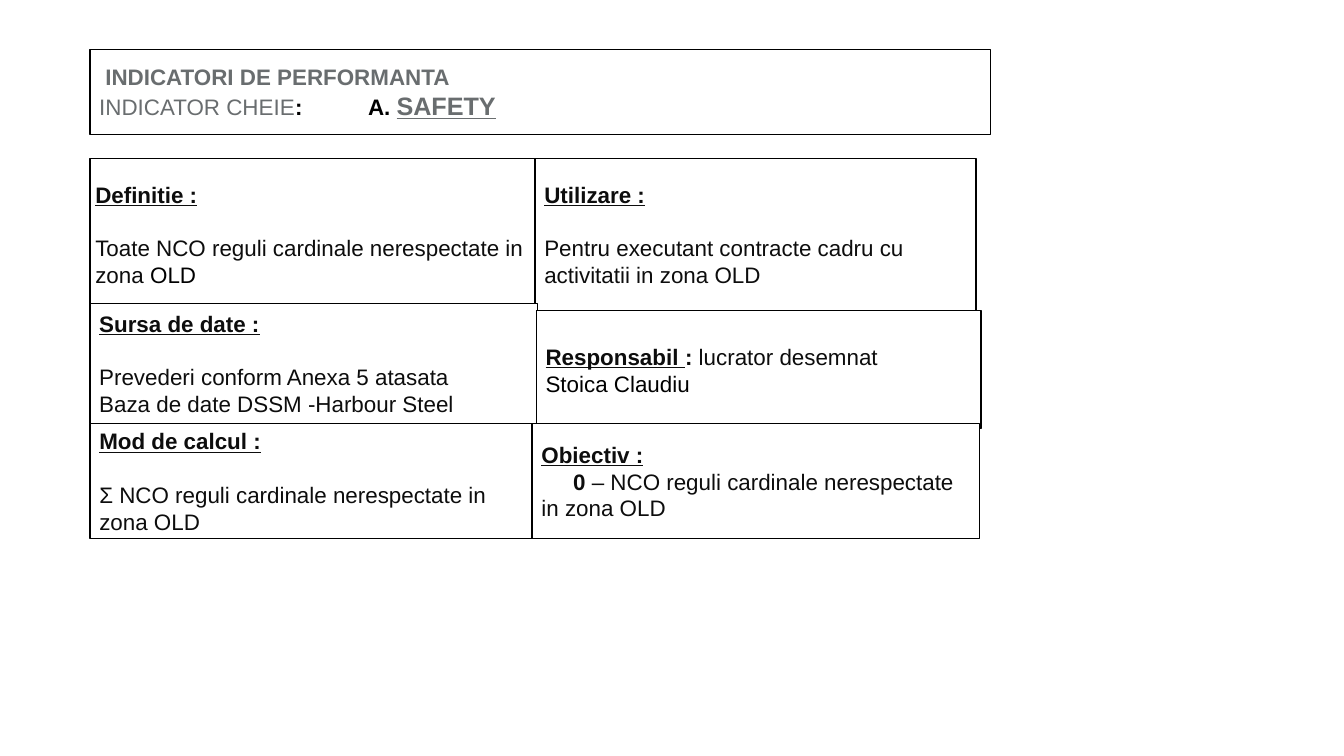
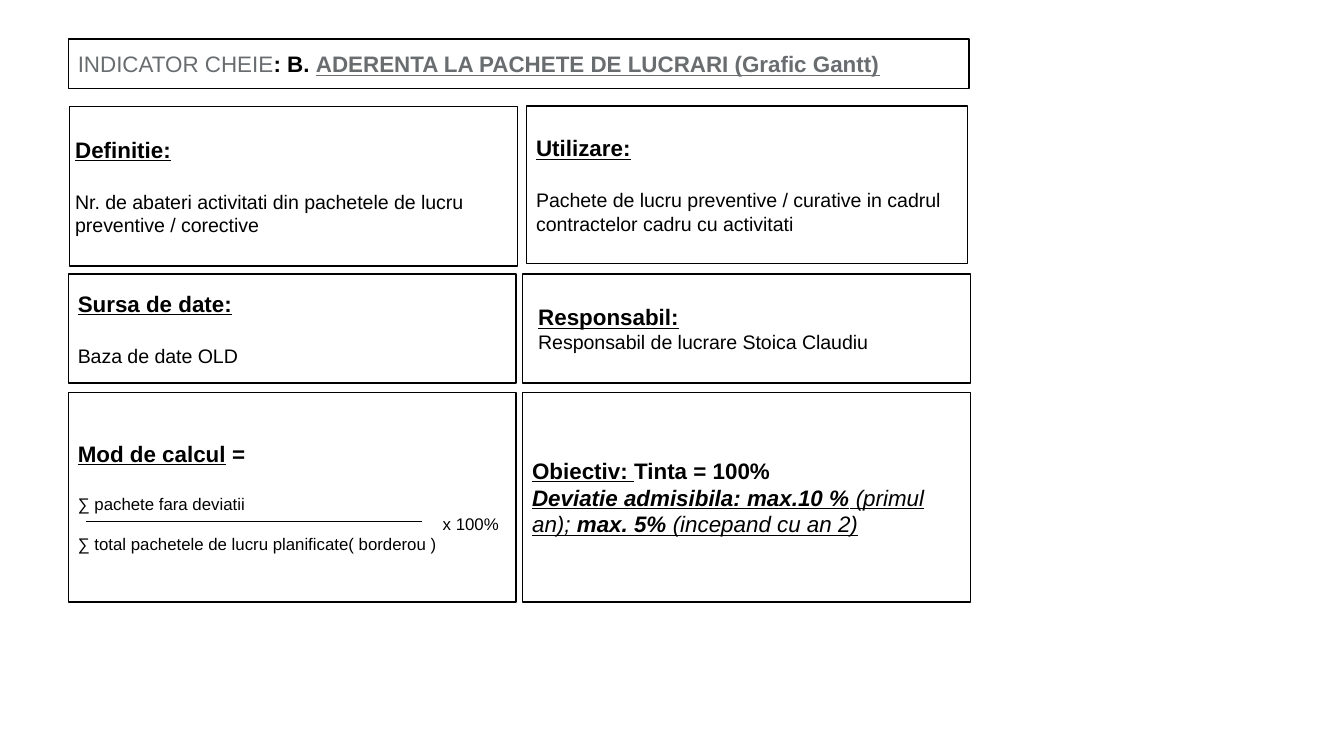
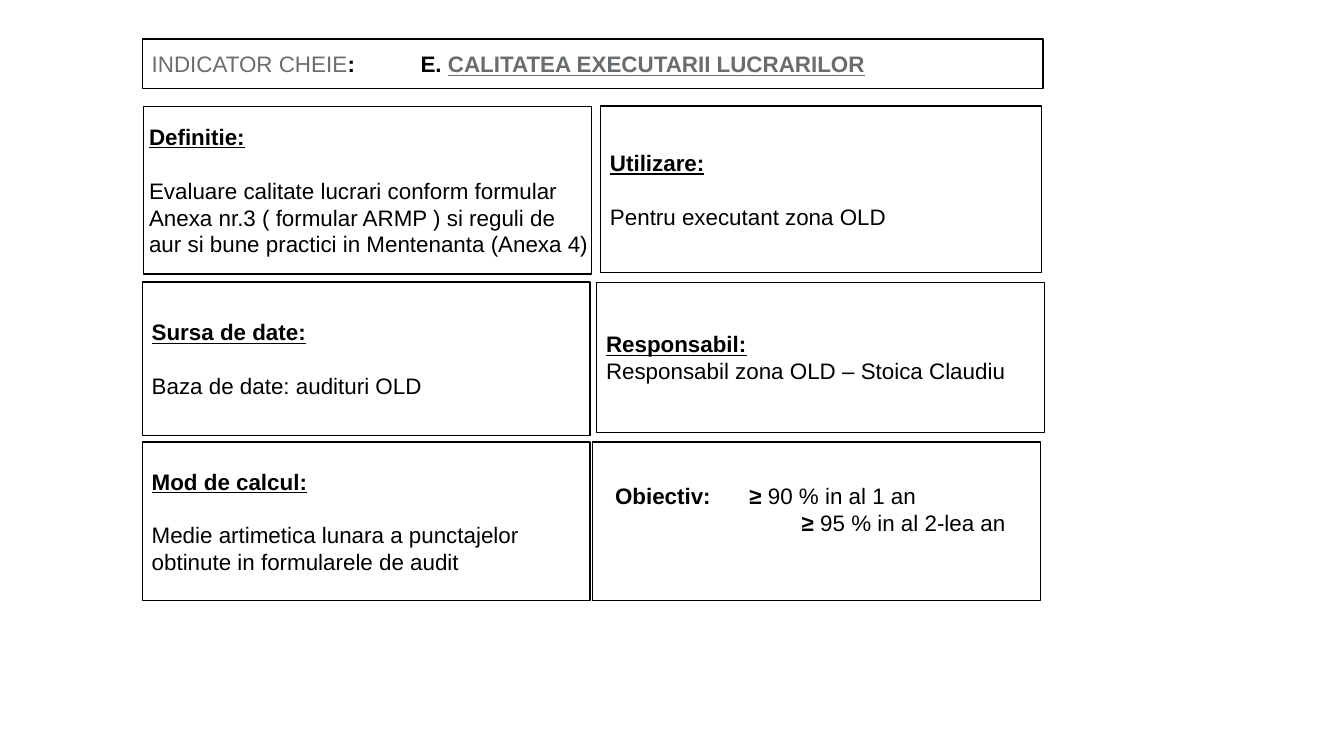
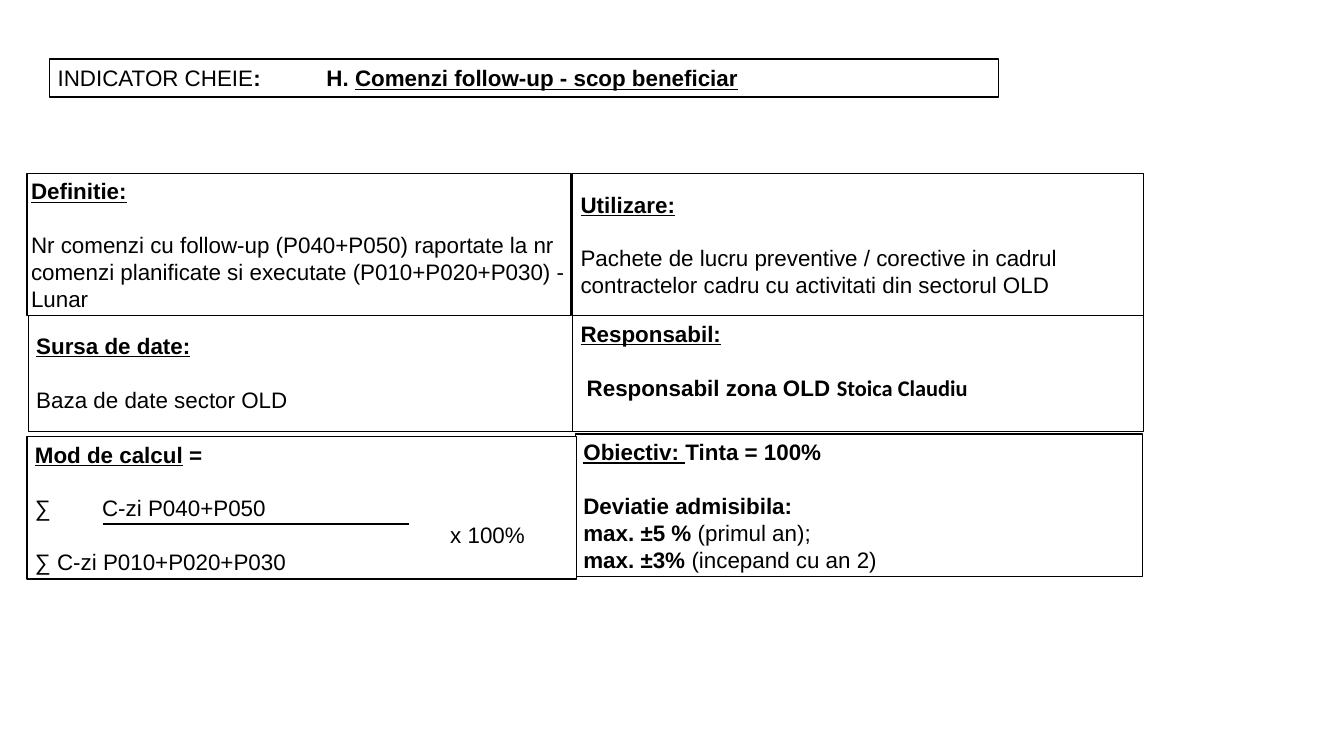
"""Builds four performance indicator sheets for framework contracts."""
from dataclasses import dataclass
from typing import Optional

import pptx
import pptx.dml.color
import pptx.enum.shapes
import pptx.enum.text
import pptx.oxml.ns
import pptx.oxml.xmlchemy
import pptx.util
from lxml import etree

Pt = pptx.util.Pt
RGBColor = pptx.dml.color.RGBColor
Anchor = pptx.enum.text.MSO_ANCHOR
qn = pptx.oxml.ns.qn

BLACK = RGBColor(0x00, 0x00, 0x00)
WHITE = RGBColor(0xFF, 0xFF, 0xFF)
INK = RGBColor(0x0D, 0x0D, 0x0D)
GRAY = RGBColor(0x69, 0x6D, 0x6F)
BORDER = 0.75
GAP = 14.4
SPACE = 3.3


@dataclass(frozen=True)
class Run:
    """A piece of text with its format; no colour means the sheet's ink."""
    text: str
    size: float = 12
    bold: bool = False
    italic: bool = False
    underline: bool = False
    color: Optional[RGBColor] = None
    font: str = "Arial"


@dataclass(frozen=True)
class Line:
    """A paragraph with its spacing, indents and tab stop in points."""
    runs: tuple[Run, ...]
    before: float = 0
    left: float = 0
    first: float = 0
    tab: float = 0


@dataclass(frozen=True)
class Insets:
    """The inner margins of a box in points."""
    left: float
    top: float
    right: float
    bottom: float


@dataclass(frozen=True)
class Box:
    """A bordered cell: left, top, width, height and its lines."""
    frame: tuple[float, float, float, float]
    lines: tuple[Line, ...]
    insets: Optional[Insets] = None
    anchor: Anchor = Anchor.MIDDLE


@dataclass(frozen=True)
class Sheet:
    """One indicator slide; a fraction bar is start x, end x and y."""
    boxes: tuple[Box, ...]
    insets: Insets
    ink: RGBColor = BLACK
    fraction_bar: Optional[tuple[float, float, float]] = None


WIDE = Insets(5, 2.9, 5, 2.9)
WIDE_DEFINITION = Insets(2.9, 2.9, 0, 2.9)
NARROW = Insets(4.3, 2.2, 4.3, 2.2)
NARROW_DEFINITION = Insets(2.2, 2.2, 0, 2.2)
TARGET = Insets(12, 21.6, 5, 2.9)


def strong(text: str, **style) -> Run:
    """Return a bold run."""
    return Run(text, bold=True, **style)


def label(text: str) -> Run:
    """Return the underlined bold name of a cell."""
    return strong(text, underline=True)


def line(*runs: Run, **layout: float) -> Line:
    """Return a paragraph made of the given runs."""
    return Line(runs, **layout)


def entry(name: str, text: str, size: float = 12) -> tuple[Line, ...]:
    """Return a cell name and, after a gap, its description."""
    return line(label(name)), line(Run(text, size), before=GAP)


def title(letter: str, name: str, tab: float = 0, color: RGBColor = GRAY,
          size: float = 12) -> Line:
    """Return the key indicator line of a sheet."""
    gap = "\t" if tab else " "
    return line(Run("INDICATOR CHEIE", color=color),
                strong(f":{gap}{letter}. ", color=BLACK),
                strong(name, size=size, underline=True, color=color), tab=tab)


SAFETY = Sheet((
    Box((48.2, 26.6, 482.4, 45.4), (
        line(strong("INDICATORI DE PERFORMANTA", color=GRAY), first=SPACE),
        title("A", "SAFETY", tab=118.7, size=13.5))),
    Box((48.2, 85, 239.8, 81.4), (
        line(label("Definitie :")),
        line(Run("Toate NCO reguli cardinale nerespectate in zona "),
             Run("OLD", color=BLACK), before=GAP)), WIDE_DEFINITION),
    Box((286.6, 85, 236.2, 81.4), entry(
        "Utilizare :", "Pentru executant contracte cadru cu activitatii in zona OLD")),
    Box((48.2, 162.7, 239.8, 64.1), (
        *entry("Sursa de date :", "Prevederi conform Anexa 5 atasata"),
        line(Run("Baza de date DSSM -Harbour Steel")))),
    Box((287.3, 166.3, 238.3, 63.4), (
        line(label("Responsabil "), strong(": "), Run("lucrator desemnat")),
        line(Run("Stoica Claudiu", color=BLACK)))),
    Box((48.2, 226.8, 236.9, 61.9), entry(
        "Mod de calcul :", "Σ NCO reguli cardinale nerespectate in zona OLD")),
    Box((285.1, 226.8, 239.8, 61.9), (
        line(label("Obiectiv :")),
        line(strong("0"), Run(" – NCO reguli cardinale nerespectate in zona OLD"),
             first=17))),
), WIDE, INK)

ADHERENCE = Sheet((
    Box((36.7, 20.9, 482.4, 26.6),
        (title("B", "ADERENTA LA PACHETE DE LUCRARI (Grafic Gantt)"),)),
    Box((37.4, 56.9, 239.8, 85.7), entry(
        "Definitie:",
        "Nr. de abateri activitati din pachetele de lucru preventive / corective",
        10.5), WIDE_DEFINITION),
    Box((282.2, 56.9, 236.2, 84.2), entry(
        "Utilizare:",
        "Pachete de lucru preventive / curative in cadrul contractelor cadru cu activitati",
        10.5)),
    Box((36.7, 146.9, 239.8, 58.3), entry("Sursa de date:", "Baza de date OLD", 10.5)),
    Box((280.1, 146.9, 239.8, 58.3), (
        line(label("Responsabil:"), first=SPACE),
        line(Run("Responsabil de lucrare Stoica Claudiu", 10.5), first=SPACE))),
    Box((36.7, 210.2, 239.8, 112.3), (
        line(label("Mod de calcul"), strong(" =")),
        line(Run("∑ pachete fara deviatii", 9), before=GAP),
        line(Run("x 100%", 9), left=195.5),
        line(Run("∑ total pachetele de lucru planificate( borderou )", 9)))),
    Box((280.1, 210.2, 239.8, 112.3), (
        line(label("Obiectiv: "), strong("Tinta = 100%")),
        line(strong("Deviatie admisibila: max.10 %", italic=True, underline=True),
             Run(" (primul an); ", italic=True, underline=True),
             strong("max. 5% ", italic=True, underline=True),
             Run("(incepand cu an 2)", italic=True, underline=True)))),
), WIDE, fraction_bar=(46.1, 226.1, 279.4))

QUALITY = Sheet((
    Box((76.3, 20.9, 482.4, 26.6),
        (title("E", "CALITATEA EXECUTARII LUCRARILOR", tab=116),)),
    Box((77, 56.9, 239.8, 90), entry(
        "Definitie:",
        "Evaluare calitate lucrari conform formular Anexa nr.3 ( formular ARMP ) "
        "si reguli de aur si bune practici in Mentenanta (Anexa 4)"), WIDE_DEFINITION),
    Box((321.8, 56.9, 236.2, 89.3), entry("Utilizare:", "Pentru executant zona OLD")),
    Box((76.3, 151.2, 239.8, 82.1),
        entry("Sursa de date:", "Baza de date: audituri OLD")),
    Box((319.7, 151.2, 239.8, 80.6), (
        line(label("Responsabil:")),
        line(Run("Responsabil zona OLD – Stoica Claudiu")))),
    Box((76.3, 236.9, 239.8, 85), entry(
        "Mod de calcul:",
        "Medie artimetica lunara a punctajelor obtinute in formularele de audit")),
    Box((317.5, 236.9, 239.8, 85), (
        line(strong("Obiectiv:\t≥ "), Run("90 % in al 1 an"), tab=100.5),
        line(strong("≥ "), Run("95 % in al 2-lea an"), left=100)), TARGET, Anchor.TOP),
), WIDE)

FOLLOW_UP = Sheet((
    Box((26.6, 31.7, 508.3, 20.2),
        (title("H", "Comenzi follow-up - scop beneficiar", 115.3, BLACK),)),
    Box((15.1, 167.8, 291.6, 63.4), entry("Sursa de date:", "Baza de date sector OLD")),
    Box((14.4, 92.9, 291.6, 76.3), entry(
        "Definitie:",
        "Nr comenzi cu follow-up (P040+P050) raportate la nr comenzi planificate "
        "si executate (P010+P020+P030) - Lunar"), NARROW_DEFINITION),
    Box((306.7, 92.9, 306, 76.3), entry(
        "Utilizare:",
        "Pachete de lucru preventive / corective in cadrul contractelor cadru "
        "cu activitati din sectorul OLD")),
    Box((306.7, 169.2, 306, 61.9), (
        line(label("Responsabil:")),
        line(strong("Responsabil zona OLD "), strong("Stoica Claudiu", font="Calibri"),
             before=GAP, first=SPACE)), anchor=Anchor.TOP),
    Box((308.2, 232.6, 303.8, 76.3), (
        line(label("Obiectiv: "), strong("Tinta = 100%")),
        line(strong("Deviatie admisibila:"), before=GAP),
        line(strong("max. ±5 %"), Run(" (primul an);")),
        line(strong("max. ±3% "), Run("(incepand cu an 2)")))),
    Box((14.4, 234, 294.5, 76.3), (
        line(label("Mod de calcul"), strong(" =")),
        line(Run("∑\tC-zi P040+P050"), before=GAP, tab=28),
        line(Run("x 100%"), left=222.5),
        line(Run("∑ C-zi P010+P020+P030")))),
), NARROW, fraction_bar=(55.4, 218.9, 280.8))


def add_text(paragraph, text: str, *, size: float, bold: bool, italic: bool,
             underline: bool, color: RGBColor, font: str) -> None:
    """Append formatted text to a paragraph."""
    run = paragraph.add_run()
    run.text = text
    run.font.size = Pt(size)
    run.font.bold = bold
    run.font.italic = italic
    run.font.underline = underline
    run.font.color.rgb = color
    run.font.name = font


def lay_out(paragraph, layout: Line) -> None:
    """Set the spacing, indents and tab stop of a paragraph."""
    paragraph.alignment = pptx.enum.text.PP_ALIGN.LEFT
    paragraph.space_before = Pt(layout.before)
    properties = paragraph._p.get_or_add_pPr()
    properties.set("marL", str(Pt(layout.left)))
    properties.set("indent", str(Pt(layout.first)))
    if layout.tab:
        stops = etree.SubElement(properties, qn("a:tabLst"))
        etree.SubElement(stops, qn("a:tab"), pos=str(Pt(layout.tab)), algn="l")


def draw_box(slide, box: Box, sheet: Sheet) -> None:
    """Draw a bordered cell with its text."""
    cell = slide.shapes.add_shape(pptx.enum.shapes.MSO_SHAPE.RECTANGLE,
                                  *(Pt(length) for length in box.frame))
    cell.shadow.inherit = False
    cell.fill.solid()
    cell.fill.fore_color.rgb = WHITE
    cell.line.color.rgb = BLACK
    cell.line.width = Pt(BORDER)
    frame = cell.text_frame
    frame.word_wrap = True
    frame.vertical_anchor = box.anchor
    insets = box.insets or sheet.insets
    frame.margin_left, frame.margin_top = Pt(insets.left), Pt(insets.top)
    frame.margin_right, frame.margin_bottom = Pt(insets.right), Pt(insets.bottom)
    for index, layout in enumerate(box.lines):
        paragraph = frame.add_paragraph() if index else frame.paragraphs[0]
        lay_out(paragraph, layout)
        for run in layout.runs:
            add_text(paragraph, run.text, size=run.size, bold=run.bold,
                     italic=run.italic, underline=run.underline,
                     color=sheet.ink if run.color is None else run.color,
                     font=run.font)


def draw_fraction_bar(slide, start: float, end: float, y: float) -> None:
    """Draw the bar between numerator and denominator."""
    bar = slide.shapes.add_connector(pptx.enum.shapes.MSO_CONNECTOR.STRAIGHT,
                                     Pt(start), Pt(y), Pt(end), Pt(y))
    bar.line.color.rgb = BLACK
    bar.line.width = Pt(BORDER)
    etree.SubElement(bar._element.spPr, qn("a:effectLst"))


def main() -> None:
    """Build and save the presentation."""
    presentation = pptx.Presentation()
    presentation.slide_width, presentation.slide_height = Pt(720), Pt(405)
    for sheet in (SAFETY, ADHERENCE, QUALITY, FOLLOW_UP):
        slide = presentation.slides.add_slide(presentation.slide_layouts[6])
        for box in sheet.boxes:
            draw_box(slide, box, sheet)
        if sheet.fraction_bar:
            draw_fraction_bar(slide, *sheet.fraction_bar)
    presentation.save("out.pptx")


if __name__ == "__main__":
    main()
